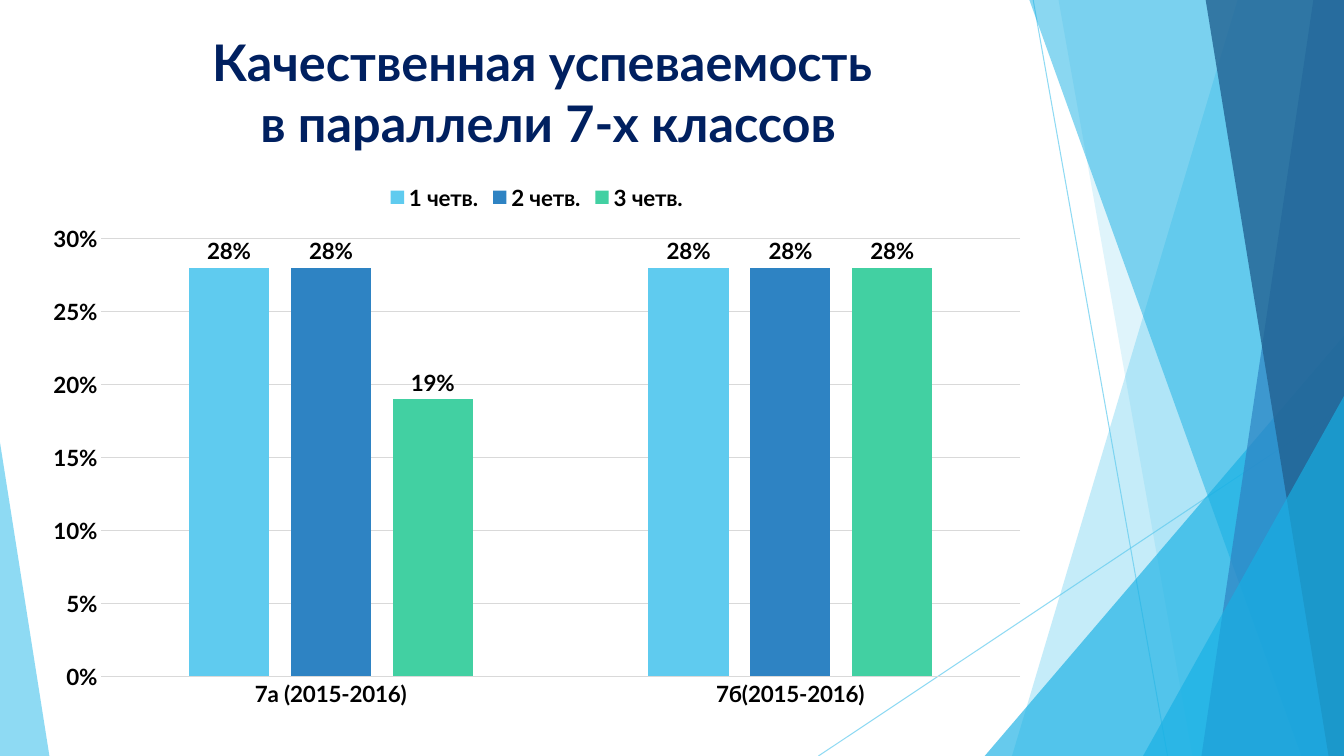
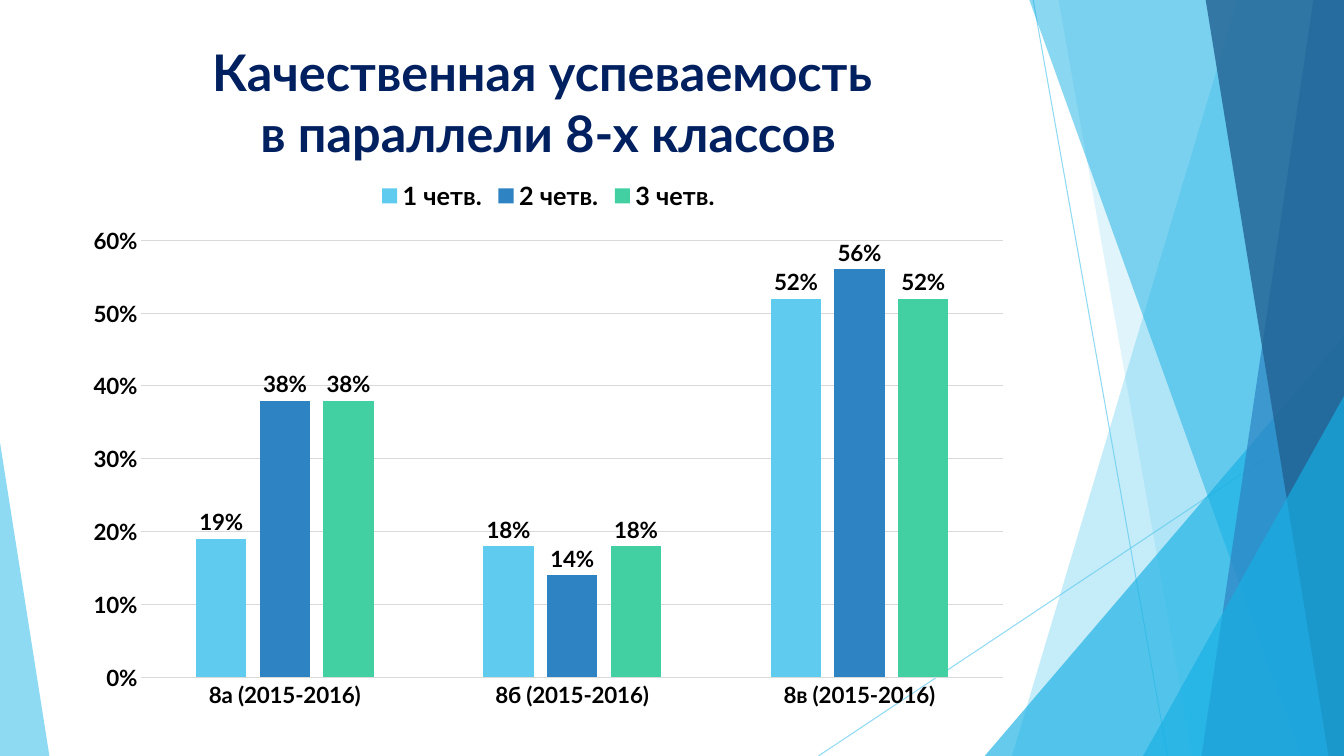
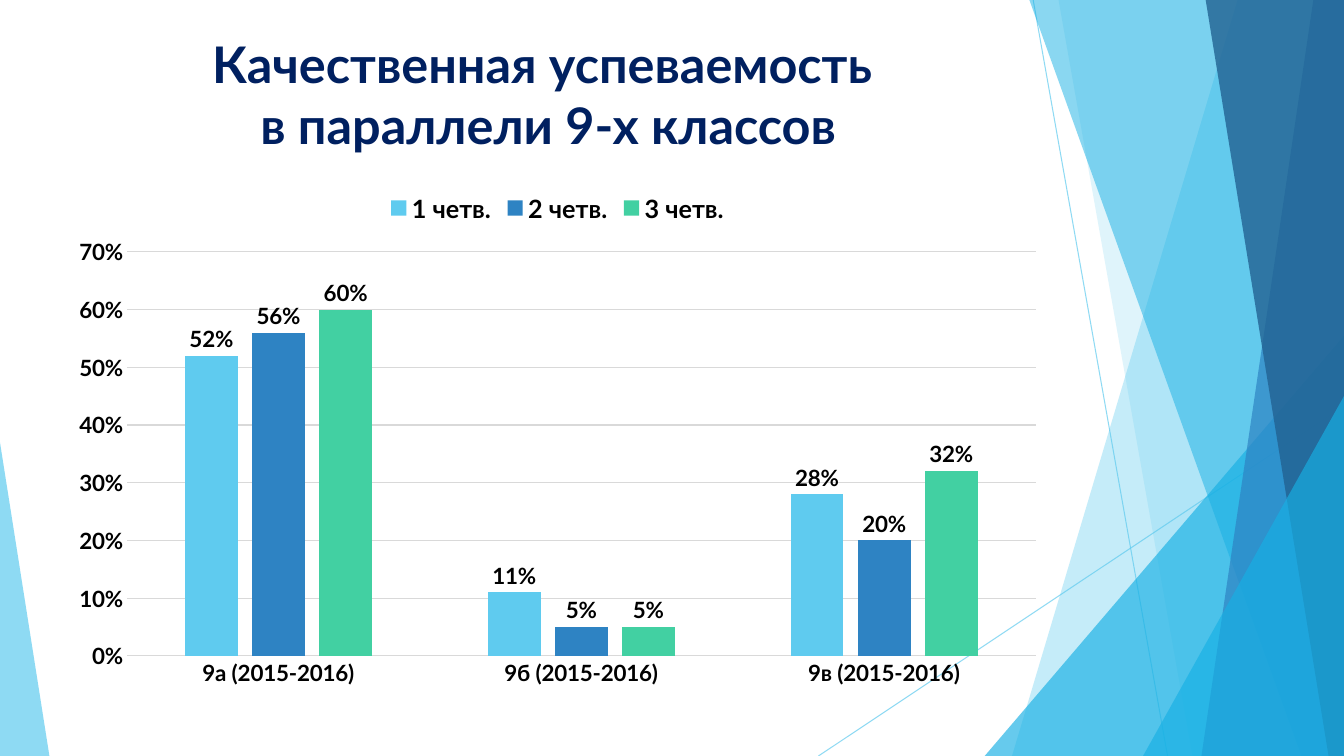
"""Quarterly pass-rate charts for grades 7 to 9 on a shared faceted backdrop."""
from dataclasses import dataclass

from lxml import etree
from pptx import Presentation
from pptx.chart.data import CategoryChartData
from pptx.dml.color import RGBColor
from pptx.enum.chart import XL_CHART_TYPE, XL_LABEL_POSITION, XL_LEGEND_POSITION, XL_TICK_MARK
from pptx.enum.shapes import MSO_CONNECTOR, MSO_SHAPE, PP_PLACEHOLDER
from pptx.enum.text import MSO_ANCHOR, MSO_AUTO_SIZE, PP_ALIGN
from pptx.oxml.ns import qn
from pptx.util import Pt

COLUMNS = XL_CHART_TYPE.COLUMN_CLUSTERED
LABEL_OUTSIDE = XL_LABEL_POSITION.OUTSIDE_END
LEGEND_TOP = XL_LEGEND_POSITION.TOP
NO_TICK = XL_TICK_MARK.NONE
STRAIGHT = MSO_CONNECTOR.STRAIGHT
TRIANGLE = MSO_SHAPE.ISOSCELES_TRIANGLE
TITLE = PP_PLACEHOLDER.TITLE
ANCHOR_TOP = MSO_ANCHOR.TOP
NO_AUTOFIT = MSO_AUTO_SIZE.NONE
CENTER = PP_ALIGN.CENTER


@dataclass(frozen=True)
class Theme:
    """Colours, font, type sizes and page size in points."""
    font: str = "Lato"
    title: str = "002060"
    text: str = "000000"
    grid: str = "D9D9D9"
    sky: str = "5FCBEF"
    cyan: str = "17B0E4"
    blue: str = "2E83C3"
    navy: str = "226292"
    green: str = "42D0A2"
    title_size: float = 36
    chart_size: float = 16
    hairline: float = 0.75
    width: float = 960
    height: float = 540
    bleed: float = 0.6


THEME = Theme()
PERCENT = "0%"
QUARTERS = ("1 четв.", "2 четв.", "3 четв.")
QUARTER_COLORS = (THEME.sky, THEME.blue, THEME.green)
TITLE_LEFT, TITLE_WIDTH, TITLE_BOTTOM = 53.3, 676.8, 152

GRADES = (
    dict(grade=7, title_top=18.7, frame=(23.8, 123.1, 719.3, 389.5), legend_size=16,
         classes=("7а (2015-2016)", "7б(2015-2016)"),
         rates=((0.28, 0.28), (0.28, 0.28), (0.19, 0.28))),
    dict(grade=8, title_top=25.9, frame=(53.3, 120.2, 676.8, 393.1), legend_size=18,
         classes=("8а (2015-2016)", "8б (2015-2016)", "8в (2015-2016)"),
         rates=((0.19, 0.18, 0.52), (0.38, 0.14, 0.56), (0.38, 0.18, 0.52))),
    dict(grade=9, title_top=20.2, frame=(42.5, 128.9, 711.4, 368.6), legend_size=18,
         classes=("9а (2015-2016)", "9б (2015-2016)", "9в (2015-2016)"),
         rates=((0.52, 0.11, 0.28), (0.56, 0.05, 0.2), (0.6, 0.05, 0.32))),
)


def rgb(color):
    """Turn a hex string into a colour."""
    return RGBColor.from_string(color)


def style_font(font, size, color):
    """Apply the deck's bold typeface."""
    font.name = THEME.font
    font.size = Pt(size)
    font.bold = True
    font.color.rgb = rgb(color)


def set_opacity(shape, percent):
    """Make every colour of a shape partly transparent."""
    for color in shape.element.iter(qn("a:srgbClr")):
        etree.SubElement(color, qn("a:alpha")).set("val", str(percent * 1000))


def paint(shape, color, opacity):
    """Give a facet a translucent fill with no outline."""
    shape.shadow.inherit = False
    shape.fill.solid()
    shape.fill.fore_color.rgb = rgb(color)
    shape.line.fill.background()
    set_opacity(shape, opacity)


def add_ray(shapes, start, end):
    """Draw a thin translucent line."""
    ray = shapes.add_connector(STRAIGHT, *(Pt(value) for value in start + end))
    ray.line.color.rgb = rgb(THEME.sky)
    ray.line.width = Pt(THEME.hairline)
    set_opacity(ray, 70)
    etree.SubElement(ray.element.spPr, qn("a:effectLst"))


def add_band(shapes, top_x, bottom_x, color, opacity):
    """Draw a slanted band reaching the right edge of the page."""
    top, bottom, right = Pt(-THEME.bleed), Pt(THEME.height), Pt(THEME.width)
    outline = shapes.build_freeform(Pt(top_x), top)
    outline.add_line_segments([(right, top), (right, bottom), (Pt(bottom_x), bottom)])
    paint(outline.convert_to_shape(), color, opacity)


def add_corner(shapes, left, top, right, peak, color, opacity):
    """Draw a right triangle standing on the bottom edge."""
    corner = shapes.add_shape(TRIANGLE, Pt(left), Pt(top),
                              Pt(right - left), Pt(THEME.height - top))
    corner.adjustments[0] = peak
    paint(corner, color, opacity)


def build_backdrop(slide, layout):
    """Draw the facets as one group and hand it to the shared layout."""
    backdrop = slide.shapes.add_group_shape()
    facets = backdrop.shapes
    add_ray(facets, (738, 0), (834, THEME.height))
    add_ray(facets, (THEME.width, 290), (584.6, THEME.height))
    add_band(facets, 884.2, 722.9, THEME.sky, 36)
    add_band(facets, 756, 851.8, THEME.sky, 20)
    add_corner(facets, 703.4, 239.8, THEME.width, 1, THEME.cyan, 66)
    add_band(facets, 735.1, 929.5, THEME.cyan, 50)
    add_band(facets, 938.2, 858.2, THEME.blue, 70)
    add_band(facets, 861.1, 949, THEME.navy, 80)
    add_corner(facets, 816.5, 283, THEME.width, 1, THEME.cyan, 66)
    add_corner(facets, 0, 316.1, 35.3, 0, THEME.sky, 70)
    layout.shapes.element.append(backdrop.element)


def strip_layout(layout):
    """Keep only the title placeholder on the layout."""
    for placeholder in list(layout.placeholders):
        if placeholder.placeholder_format.type != TITLE:
            layout.shapes.element.remove(placeholder.element)


def set_title(slide, text, top):
    """Place and format the slide title."""
    title = slide.shapes.title
    title.left, title.top = Pt(TITLE_LEFT), Pt(top)
    title.width, title.height = Pt(TITLE_WIDTH), Pt(TITLE_BOTTOM - top)
    frame = title.text_frame
    frame.text = text
    frame.word_wrap = True
    frame.auto_size = NO_AUTOFIT
    frame.vertical_anchor = ANCHOR_TOP
    heading = frame.paragraphs[0]
    heading.alignment = CENTER
    style_font(heading.font, THEME.title_size, THEME.title)


def style_axes(chart):
    """Format both axes and the gridlines."""
    for axis in (chart.category_axis, chart.value_axis):
        axis.major_tick_mark = axis.minor_tick_mark = NO_TICK
        style_font(axis.tick_labels.font, THEME.chart_size, THEME.text)
    rates = chart.value_axis
    rates.tick_labels.number_format = PERCENT
    rates.tick_labels.number_format_is_linked = False
    rates.format.line.fill.background()
    rates.has_major_gridlines = True
    for line in (chart.category_axis.format.line, rates.major_gridlines.format.line):
        line.color.rgb = rgb(THEME.grid)
        line.width = Pt(THEME.hairline)


def add_rate_chart(slide, frame, classes, rates, legend_size):
    """Add the column chart of pass rates by class and quarter."""
    data = CategoryChartData(number_format=PERCENT)
    data.categories = classes
    for quarter, values in zip(QUARTERS, rates):
        data.add_series(quarter, values)
    chart = slide.shapes.add_chart(COLUMNS, *(Pt(value) for value in frame), data).chart
    chart.has_title = False
    style_font(chart.font, THEME.chart_size, THEME.text)
    style_axes(chart)

    chart.has_legend = True
    chart.legend.position = LEGEND_TOP
    chart.legend.include_in_layout = False
    style_font(chart.legend.font, legend_size, THEME.text)

    plot = chart.plots[0]
    plot.gap_width, plot.overlap = 219, -27
    plot.vary_by_categories = False
    for quarter, color in zip(plot.series, QUARTER_COLORS):
        quarter.format.fill.solid()
        quarter.format.fill.fore_color.rgb = rgb(color)
        labels = quarter.data_labels
        labels.show_value = True
        labels.position = LABEL_OUTSIDE
        labels.number_format = PERCENT
        labels.number_format_is_linked = False
        style_font(labels.font, THEME.chart_size, THEME.text)


def main():
    """Build and save the deck."""
    deck = Presentation()
    deck.slide_width, deck.slide_height = Pt(THEME.width), Pt(THEME.height)
    layout = deck.slide_layouts[5]
    strip_layout(layout)
    slides = [deck.slides.add_slide(layout) for _ in GRADES]
    build_backdrop(slides[0], layout)
    for slide, content in zip(slides, GRADES):
        set_title(slide, f"Качественная успеваемость \vв параллели {content['grade']}-х классов",
                  content["title_top"])
        add_rate_chart(slide, content["frame"], content["classes"], content["rates"],
                       content["legend_size"])
    deck.save("out.pptx")


if __name__ == "__main__":
    main()
